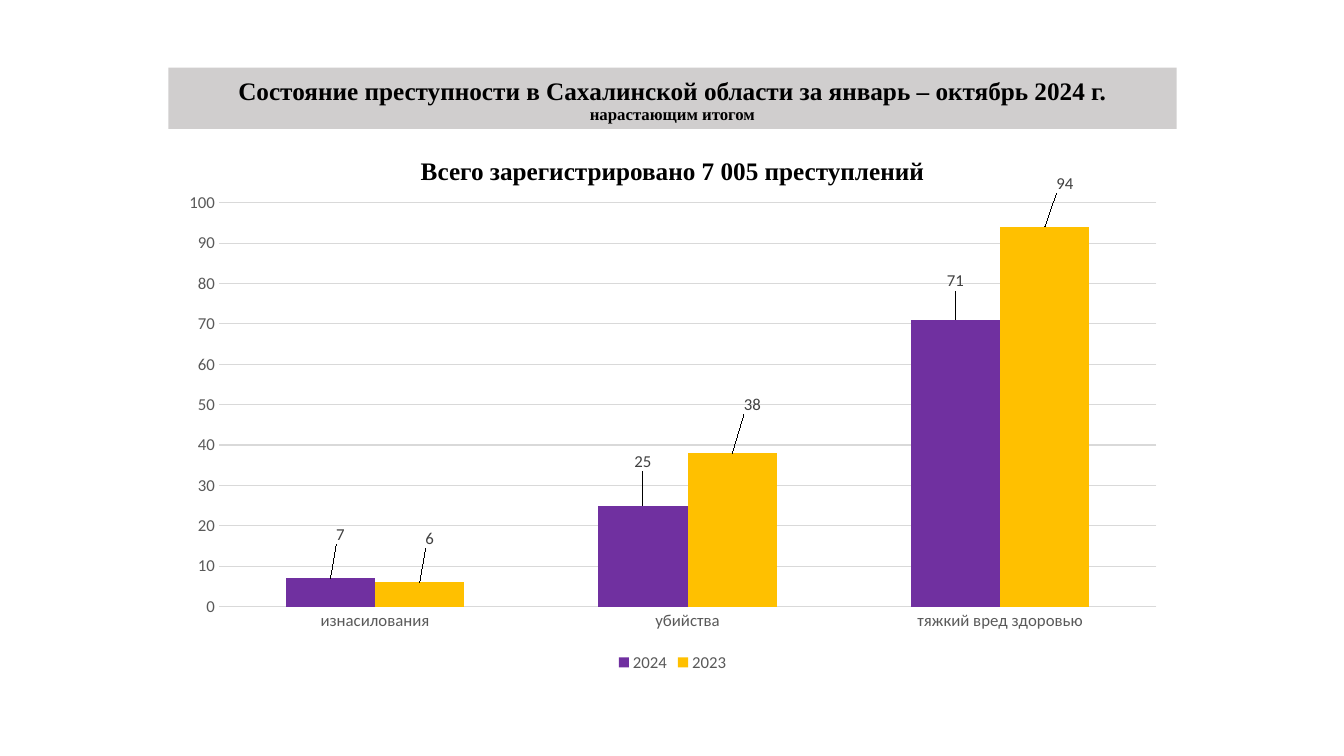
import pptx
import pptx.chart.data
import pptx.dml.color
import pptx.enum.chart
import pptx.enum.text
import pptx.oxml
import pptx.oxml.ns
import pptx.util

Inches = pptx.util.Inches
Pt = pptx.util.Pt
RGB = pptx.dml.color.RGBColor

BLACK = RGB(0, 0, 0)
BAND = RGB(0xD0, 0xCE, 0xCE)
GRID = RGB(0xD9, 0xD9, 0xD9)
GREY = RGB(0x59, 0x59, 0x59)
DARK = RGB(0x40, 0x40, 0x40)
PURPLE = RGB(0x70, 0x30, 0xA0)
GOLD = RGB(0xFF, 0xC0, 0x00)

LEFT, WIDTH = Inches(1.67), Inches(10)
CRIMES = ["изнасилования", "убийства", "тяжкий вред здоровью"]
YEARS = [
    ("2024", (7, 25, 71), PURPLE, [(0.01, -0.06), (0, -0.06), (0, -0.05)]),
    ("2023", (6, 38, 94), GOLD, [(0.01, -0.06), (0.02, -0.07), (0.02, -0.06)]),
]


def style(font, size, color, name="Calibri", bold=False):
    font.size = Pt(size)
    font.color.rgb = color
    font.name = name
    font.bold = bold


def format_line(par, spacing, before):
    par.alignment = pptx.enum.text.PP_ALIGN.CENTER
    par.line_spacing = spacing
    par.space_before = Pt(before)
    style(par.font, 18, BLACK, "Times New Roman", True)


def add_title(slide):
    title = slide.shapes.title
    title.left, title.top = LEFT, Inches(0.67)
    title.width, title.height = WIDTH, Inches(0.61)
    title.fill.solid()
    title.fill.fore_color.rgb = BAND
    frame = title.text_frame
    frame.auto_size = pptx.enum.text.MSO_AUTO_SIZE.NONE
    frame.vertical_anchor = pptx.enum.text.MSO_ANCHOR.BOTTOM
    par = frame.paragraphs[0]
    format_line(par, 0.9, 0)
    head = par.add_run()
    head.text = "Состояние преступности в Сахалинской области за январь – октябрь 2024 г."
    par.add_line_break()
    note = par.add_run()
    note.text = "нарастающим итогом"
    note.font.size = Pt(12)


def add_total(slide):
    box = slide.shapes.add_textbox(LEFT, Inches(1.55), WIDTH, Inches(0.36))
    box.text_frame.word_wrap = True
    par = box.text_frame.paragraphs[0]
    par.text = "Всего зарегистрировано 7 005 преступлений"
    format_line(par, 0.8, 10)


def make_xml(body):
    space = pptx.oxml.ns.nsdecls("c", "a")
    return pptx.oxml.parse_xml(body.replace(">", f" {space}>", 1))


def clear_back(chart):
    root = chart.element
    text = root.find(pptx.oxml.ns.qn("c:txPr"))
    text.addprevious(make_xml(
        "<c:spPr><a:noFill/><a:ln><a:noFill/></a:ln></c:spPr>"))


def place_plot(chart, x, y, w, h):
    area = chart.element.find(".//" + pptx.oxml.ns.qn("c:plotArea"))
    old = area.find(pptx.oxml.ns.qn("c:layout"))
    if old is not None:
        area.remove(old)
    area.insert(0, make_xml(
        '<c:layout><c:manualLayout><c:layoutTarget val="inner"/>'
        '<c:xMode val="edge"/><c:yMode val="edge"/>'
        f'<c:x val="{x}"/><c:y val="{y}"/><c:w val="{w}"/><c:h val="{h}"/>'
        "</c:manualLayout></c:layout>"))


def format_axis(axis):
    axis.major_tick_mark = pptx.enum.chart.XL_TICK_MARK.NONE
    axis.minor_tick_mark = pptx.enum.chart.XL_TICK_MARK.NONE
    axis.format.line.fill.background()
    style(axis.tick_labels.font, 12, GREY)


def format_bars(bars, color, shifts):
    outside = pptx.enum.chart.XL_LABEL_POSITION.OUTSIDE_END
    bars.format.fill.solid()
    bars.format.fill.fore_color.rgb = color
    bars.invert_if_negative = False
    labels = bars.data_labels
    labels.show_value = True
    labels.position = outside
    style(labels.font, 12, DARK)
    for index, (x, y) in enumerate(shifts):
        label = bars.points[index].data_label
        label.position = outside
        style(label.font, 12, DARK)
    marks = bars.data_labels._element.findall(pptx.oxml.ns.qn("c:dLbl"))
    for mark, (x, y) in zip(marks, shifts):
        mark.insert(1, make_xml(
            f'<c:layout><c:manualLayout><c:x val="{x}"/><c:y val="{y}"/>'
            "</c:manualLayout></c:layout>"))


def add_bars(slide):
    data = pptx.chart.data.CategoryChartData()
    data.categories = CRIMES
    for name, values, _, _ in YEARS:
        data.add_series(name, values)
    kind = pptx.enum.chart.XL_CHART_TYPE.COLUMN_CLUSTERED
    chart = slide.shapes.add_chart(
        kind, LEFT, Inches(1.72), WIDTH, Inches(4.99), data).chart
    style(chart.font, 10, BLACK)
    chart.has_title = False
    clear_back(chart)
    place_plot(chart, 0.05, 0.05, 0.93, 0.81)
    plot = chart.plots[0]
    plot.gap_width = 150
    plot.overlap = 0
    plot.vary_by_categories = False
    for bars, (_, _, color, shifts) in zip(plot.series, YEARS):
        format_bars(bars, color, shifts)
    format_axis(chart.category_axis)
    scale = chart.value_axis
    format_axis(scale)
    scale.minimum_scale, scale.maximum_scale, scale.major_unit = 0, 100, 10
    scale.major_gridlines.format.line.color.rgb = GRID
    scale.major_gridlines.format.line.width = Pt(0.75)
    chart.has_legend = True
    chart.legend.position = pptx.enum.chart.XL_LEGEND_POSITION.BOTTOM
    chart.legend.include_in_layout = False
    style(chart.legend.font, 12, GREY)


def main():
    deck = pptx.Presentation()
    deck.slide_width, deck.slide_height = Inches(13.33), Inches(7.5)
    slide = deck.slides.add_slide(deck.slide_layouts[5])
    add_title(slide)
    add_total(slide)
    add_bars(slide)
    deck.save("out.pptx")


if __name__ == "__main__":
    main()
